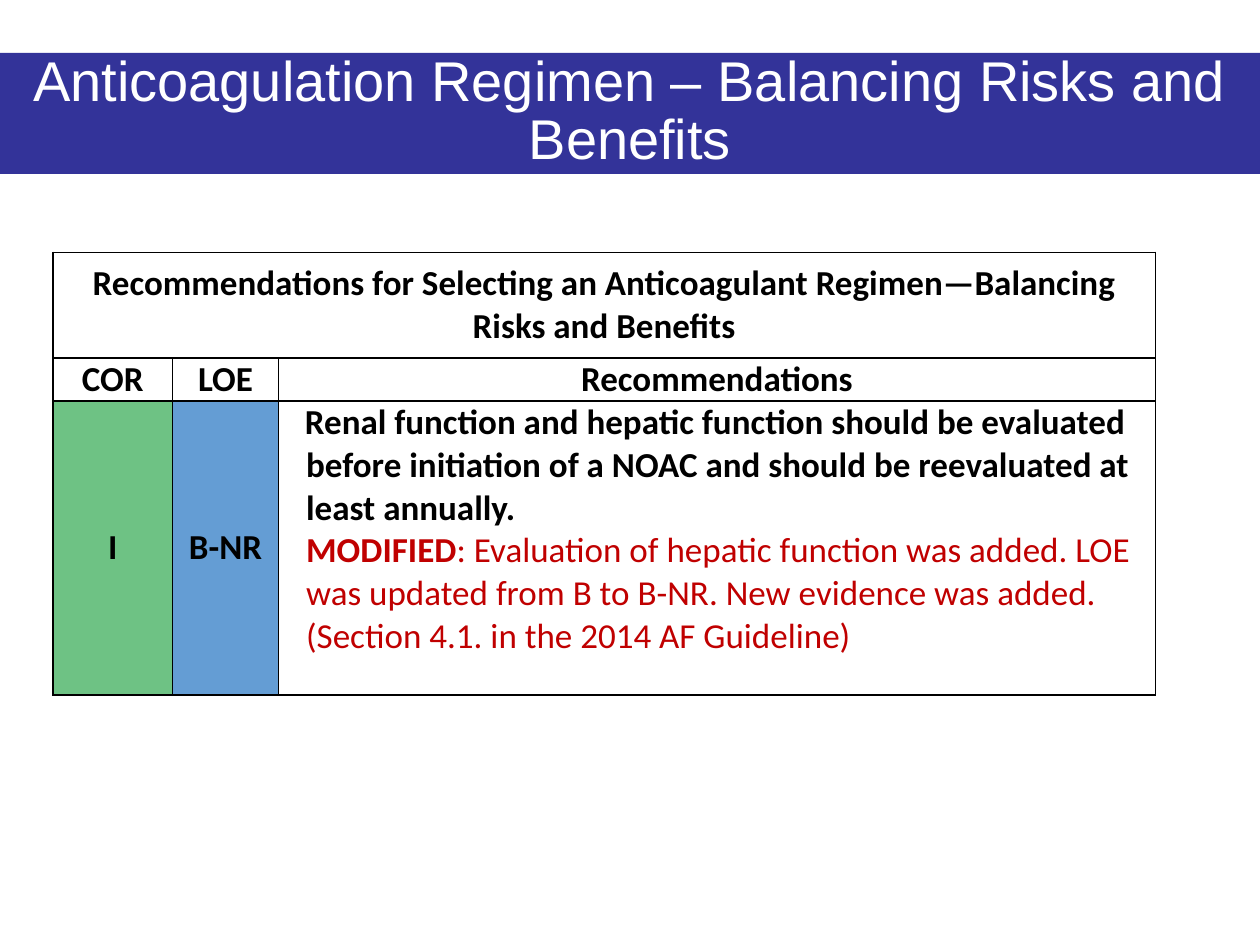
from lxml import etree
from pptx import Presentation
from pptx import util as u
from pptx.dml.color import RGBColor
from pptx.enum import text
from pptx.oxml import ns

COLORS = {"bar": "333399", "white": "FFFFFF", "black": "000000",
          "class": "6EC284", "level": "649DD4", "change": "C00000"}
W, H = u.Inches(10), u.Inches(7.5)
COLS = (0.095, 0.084, 0.696)
ROWS = (0.112, 0.044, 0.311)
CENTER = text.PP_ALIGN.CENTER


def rgb(name):
    return RGBColor.from_string(COLORS[name])


def share(x, y):
    return int(W * x), int(H * y)


def add_run(p, words, size, font, color, bold=False):
    r = p.add_run()
    r.text = words
    r.font.size = u.Pt(size)
    r.font.name = font
    r.font.bold = bold
    r.font.color.rgb = rgb(color)


def add_title(s, words):
    sp = s.shapes.title
    sp.left, sp.top = share(0, 0.056)
    sp.width, sp.height = share(1, 0.128)
    sp.fill.solid()
    sp.fill.fore_color.rgb = rgb("bar")
    tf = sp.text_frame
    tf.word_wrap = True
    tf.auto_size = text.MSO_AUTO_SIZE.NONE
    tf.vertical_anchor = text.MSO_ANCHOR.MIDDLE
    p = tf.paragraphs[0]
    p.alignment = CENTER
    p.line_spacing = 0.85
    add_run(p, words, 32, "Arial", "white")


def add_borders(cell):
    pr = cell._tc.get_or_add_tcPr()
    for i, side in enumerate(("lnL", "lnR", "lnT", "lnB")):
        ln = etree.Element(ns.qn(f"a:{side}"), w=str(u.Pt(1)))
        fill = etree.SubElement(ln, ns.qn("a:solidFill"))
        etree.SubElement(fill, ns.qn("a:srgbClr"), val=COLORS["black"])
        pr.insert(i, ln)


def format_cell(cell, fill=None):
    cell.margin_left = cell.margin_right = u.Inches(0.02)
    cell.margin_top = cell.margin_bottom = 0
    cell.vertical_anchor = text.MSO_ANCHOR.MIDDLE
    if fill:
        cell.fill.solid()
        cell.fill.fore_color.rgb = rgb(fill)
    else:
        cell.fill.background()
    add_borders(cell)


def add_label(cell, words):
    p = cell.text_frame.paragraphs[0]
    p.alignment = CENTER
    add_run(p, words, 20, "Calibri", "black", True)


def add_advice(cell, paragraphs):
    cell.vertical_anchor = text.MSO_ANCHOR.TOP
    tf = cell.text_frame
    for i, (indent, runs) in enumerate(paragraphs):
        p = tf.add_paragraph() if i else tf.paragraphs[0]
        pr = p._p.get_or_add_pPr()
        pr.set("marL", str(u.Inches(0.2)))
        pr.set("indent", str(u.Inches(indent)))
        for words, color, bold in runs:
            add_run(p, words, 20, "Calibri", color, bold)


def add_grid(s):
    size = share(sum(COLS), sum(ROWS))
    tbl = s.shapes.add_table(len(ROWS), len(COLS), *share(0.042, 0.267), *size).table
    tbl.first_row = tbl.horz_banding = False
    for col, part in zip(tbl.columns, COLS):
        col.width = int(W * part)
    for row, part in zip(tbl.rows, ROWS):
        row.height = int(H * part)
    fills = {(2, 0): "class", (2, 1): "level"}
    for i in range(len(ROWS)):
        for j in range(len(COLS)):
            format_cell(tbl.cell(i, j), fills.get((i, j)))
    tbl.cell(0, 0).merge(tbl.cell(0, 2))
    return tbl


def main():
    prs = Presentation()
    prs.slide_width, prs.slide_height = W, H
    s = prs.slides.add_slide(prs.slide_layouts[5])
    add_title(s, "Anticoagulation Regimen – Balancing Risks and Benefits")
    tbl = add_grid(s)
    labels = (
        ("Recommendations for Selecting an Anticoagulant Regimen—Balancing Risks and Benefits",),
        ("COR", "LOE", "Recommendations"),
        ("I", "B-NR"),
    )
    for i, row in enumerate(labels):
        for j, words in enumerate(row):
            add_label(tbl.cell(i, j), words)
    add_advice(tbl.cell(2, 2), (
        (-0.01, (("Renal function and hepatic function should be evaluated before "
                  "initiation of a NOAC and should be reevaluated at least annually.",
                  "black", True),)),
        (0, (("MODIFIED", "change", True),
             (": Evaluation of hepatic function was added. LOE was updated from B to "
              "B-NR. New evidence was added. (Section 4.1. in the 2014 AF Guideline)",
              "change", False))),
    ))
    prs.save("out.pptx")


if __name__ == "__main__":
    main()
